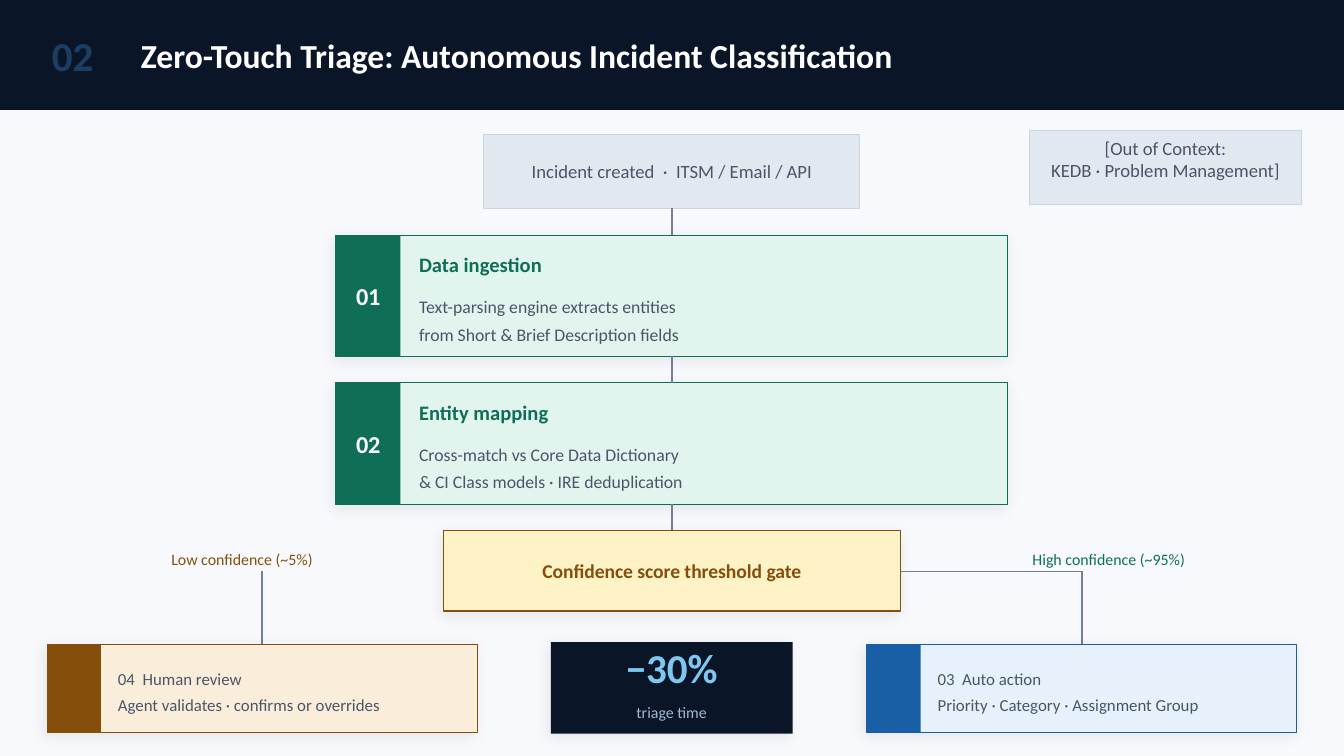
from lxml.etree import SubElement
from pptx import Presentation
from pptx.dml.color import RGBColor
from pptx.enum.shapes import MSO_CONNECTOR, MSO_SHAPE
from pptx.enum.text import MSO_ANCHOR, MSO_AUTO_SIZE, PP_ALIGN
from pptx.oxml.ns import qn
from pptx.util import Cm, Pt

NAVY = RGBColor(0x0A, 0x16, 0x28)
STEEL = RGBColor(0x1E, 0x3D, 0x63)
WHITE = RGBColor(0xFF, 0xFF, 0xFF)
PAPER = RGBColor(0xF7, 0xF9, 0xFC)
MIST = RGBColor(0xE2, 0xE8, 0xF0)
EDGE = RGBColor(0xCB, 0xD5, 0xE1)
SLATE = RGBColor(0x4A, 0x55, 0x68)
GREY = RGBColor(0x71, 0x80, 0x96)
GREEN = RGBColor(0x0F, 0x6E, 0x56)
MINT = RGBColor(0xE1, 0xF5, 0xEE)
BROWN = RGBColor(0x85, 0x4F, 0x0B)
CREAM = RGBColor(0xFE, 0xF3, 0xC7)
SAND = RGBColor(0xFA, 0xEE, 0xDA)
BLUE = RGBColor(0x18, 0x5F, 0xA5)
ICE = RGBColor(0xE6, 0xF1, 0xFB)
SKY = RGBColor(0x7E, 0xC8, 0xF0)
HAZE = RGBColor(0xA0, 0xB8, 0xD4)

LEFT, MID = PP_ALIGN.LEFT, PP_ALIGN.CENTER
TOP, CORE, BASE = MSO_ANCHOR.TOP, MSO_ANCHOR.MIDDLE, MSO_ANCHOR.BOTTOM


class Deck:
    """Holds the style and the current slide; lengths are in centimetres."""
    font = "Calibri"

    def __init__(self, wide, high):
        self.prs = Presentation()
        self.prs.slide_width, self.prs.slide_height = Cm(wide), Cm(high)
        self.slide = self.prs.slides.add_slide(self.prs.slide_layouts[5])
        self.slide.background.fill.solid()
        self.slide.background.fill.fore_color.rgb = PAPER

    def letter(self, shape, text, size, color, bold=False, align=MID,
               anchor=CORE, space=None):
        frame = shape.text_frame
        frame.text = text
        frame.word_wrap = True
        frame.auto_size = MSO_AUTO_SIZE.NONE
        frame.vertical_anchor = anchor
        for para in frame.paragraphs:
            para.alignment = align
            if space:
                para.line_spacing = space
            para.font.name, para.font.size = self.font, Pt(size)
            para.font.bold, para.font.color.rgb = bold, color

    def label(self, x, y, w, h, text, size, color, **style):
        box = self.slide.shapes.add_textbox(Cm(x), Cm(y), Cm(w), Cm(h))
        self.letter(box, text, size, color, **style)

    def title(self, x, y, w, h, text):
        head = self.slide.shapes.title
        head.left, head.top, head.width, head.height = Cm(x), Cm(y), Cm(w), Cm(h)
        self.letter(head, text, 18, WHITE, bold=True, align=LEFT)
        return head

    def rect(self, x, y, w, h, fill, line=None, width=0.5, shade=False):
        box = self.slide.shapes.add_shape(
            MSO_SHAPE.RECTANGLE, Cm(x), Cm(y), Cm(w), Cm(h))
        box.shadow.inherit = False
        box.fill.solid()
        box.fill.fore_color.rgb = fill
        if line is None:
            box.line.fill.background()
        else:
            box.line.color.rgb, box.line.width = line, Pt(width)
        if shade:
            self.shade(box)
        return box

    def shade(self, box):
        effect = box._element.spPr.find(qn("a:effectLst"))
        outer = SubElement(effect, qn("a:outerShdw"), blurRad=str(Pt(8)),
                           dist=str(Pt(2)), dir="8100000", algn="bl",
                           rotWithShape="0")
        tint = SubElement(outer, qn("a:srgbClr"), val="000000")
        SubElement(tint, qn("a:alpha"), val="8000")

    def line(self, x1, y1, x2, y2, width=0.8):
        link = self.slide.shapes.add_connector(
            MSO_CONNECTOR.STRAIGHT, Cm(x1), Cm(y1), Cm(x2), Cm(y2))
        link.line.color.rgb, link.line.width = GREY, Pt(width)
        SubElement(link._element.spPr, qn("a:effectLst"))

    def step(self, y, mark, name, text):
        x, h = 6.35, 2.29
        self.rect(x, y, 12.7, h, MINT, GREEN, shade=True)
        self.rect(x, y, 1.22, h, GREEN)
        self.label(x, y, 1.22, h, mark, 13, WHITE, bold=True)
        self.label(x + 1.32, y + 0.2, 11.18, 0.71, name, 11, GREEN,
                   bold=True, align=LEFT)
        self.label(x + 1.32, y + 0.91, 11.18, 1.27, text, 9.5, SLATE,
                   align=LEFT, space=1.3)

    def result(self, x, text, fill, color):
        y, h = 12.19, 1.65
        self.rect(x, y, 8.13, h, fill, color, shade=True)
        self.rect(x, y, 1.02, h, color)
        self.label(x + 1.09, y, 6.91, h, text, 9, SLATE, align=LEFT, space=1.3)


def main():
    deck = Deck(25.4, 14.29)

    # Header band, with the title raised above it
    band = deck.rect(0, 0, 25.4, 2.08, NAVY)
    head = deck.title(2.41, 0, 19.81, 2.08,
                      "Zero-Touch Triage: Autonomous Incident Classification")
    band._element.addnext(head._element)
    deck.label(0.46, 0, 1.83, 2.08, "02", 22, STEEL, bold=True)

    # Trigger and side note
    start = deck.rect(9.14, 2.54, 7.11, 1.4, MIST, EDGE)
    deck.letter(start, "Incident created  ·  ITSM / Email / API", 10, SLATE)
    note = deck.rect(19.46, 2.46, 5.13, 1.4, MIST, EDGE)
    deck.letter(note, "[Out of Context:\nKEDB · Problem Management]", 10, SLATE,
                anchor=TOP)

    # Steps
    first, pitch, gap = 4.45, 2.79, 0.51
    steps = [
        ("01", "Data ingestion", "Text-parsing engine extracts entities\n"
         "from Short & Brief Description fields"),
        ("02", "Entity mapping", "Cross-match vs Core Data Dictionary\n"
         "& CI Class models · IRE deduplication"),
    ]
    for i, item in enumerate(steps):
        deck.step(first + i * pitch, *item)
    for i in range(len(steps) + 1):
        y = first + i * pitch
        deck.line(12.7, y - gap, 12.7, y, 1)

    # Confidence gate and its branches
    gate = deck.rect(8.38, 10.03, 8.64, 1.52, CREAM, BROWN, 0.8, shade=True)
    deck.letter(gate, "Confidence score threshold gate", 10.5, BROWN, bold=True)
    deck.line(17.02, 10.8, 20.45, 10.8)
    for x in (4.95, 20.45):
        deck.line(x, 10.8, x, 12.19)
    deck.label(2.29, 10.29, 4.57, 0.56, "Low confidence (~5%)", 8.5, BROWN)
    deck.label(18.54, 10.29, 4.83, 0.56, "High confidence (~95%)", 8.5, GREEN)

    # Results
    deck.result(0.89, "04  Human review\nAgent validates · confirms or overrides",
                SAND, BROWN)
    deck.result(16.38, "03  Auto action\nPriority · Category · Assignment Group",
                ICE, BLUE)

    # Key figure
    deck.rect(10.41, 12.14, 4.57, 1.73, NAVY, shade=True)
    deck.label(10.41, 12.14, 4.57, 1.07, "−30%", 22, SKY, bold=True, anchor=BASE)
    deck.label(10.41, 13.16, 4.57, 0.71, "triage time", 8.5, HAZE, anchor=TOP)

    deck.prs.save("out.pptx")


if __name__ == "__main__":
    main()
